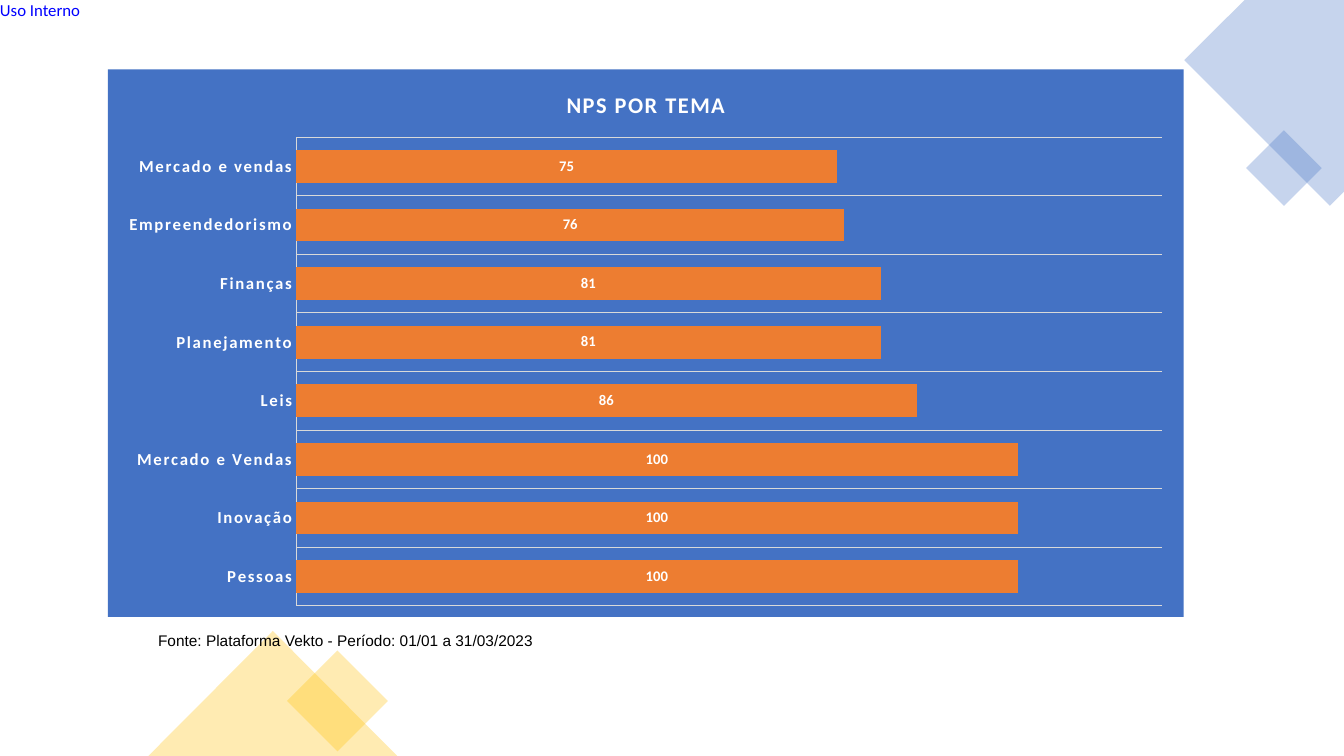
from lxml import etree
from pptx import Presentation
from pptx import util as u
from pptx.chart.data import CategoryChartData
from pptx.dml.color import RGBColor
from pptx.enum import chart as ch, shapes, text
from pptx.oxml import parse_xml
from pptx.oxml.ns import nsdecls, qn

Pt = u.Pt
BLUE = RGBColor(0x44, 0x72, 0xC4)
GOLD = RGBColor(0xFF, 0xC0, 0x00)
ORANGE = RGBColor(0xED, 0x7D, 0x31)
GRAY = RGBColor(0xD9, 0xD9, 0xD9)
WHITE = RGBColor(0xFF, 0xFF, 0xFF)
BLACK = RGBColor(0, 0, 0)
LINK_BLUE = RGBColor(0, 0, 0xFF)

WIDTH, HEIGHT = 960, 540
LETTER_SPACING = 120  # hundredths of a point
NPS = [
    ("Pessoas", 100), ("Inovação", 100), ("Mercado e Vendas", 100), ("Leis", 86),
    ("Planejamento", 81), ("Finanças", 81), ("Empreendedorismo", 76), ("Mercado e vendas", 75),
]


def paint(sp, color):
    """Flat fill at 30 % opacity, without outline or shadow."""
    sp.shadow.inherit = False
    sp.line.fill.background()
    sp.fill.solid()
    sp.fill.fore_color.rgb = color
    clr = sp.fill._xPr.find(qn("a:solidFill"))[0]
    etree.SubElement(clr, qn("a:alpha")).set("val", "30000")


def add_shape(slide, kind, box, color, rotation=0):
    sp = slide.shapes.add_shape(kind, *map(Pt, box))
    sp.rotation = rotation
    paint(sp, color)


def add_label(slide, box, words, size, font, color, margins):
    sp = slide.shapes.add_textbox(*map(Pt, box))
    tf = sp.text_frame
    tf.word_wrap = True
    tf.auto_size = text.MSO_AUTO_SIZE.NONE
    tf.margin_left = tf.margin_right = Pt(margins[0])
    tf.margin_top = tf.margin_bottom = Pt(margins[1])
    tf.text = words
    style_font(tf.paragraphs[0].runs[0].font, size, color, font)


def style_font(font, size, color, name="Calibri", bold=False, spacing=0):
    font.size, font.name, font.bold = Pt(size), name, bold
    font.color.rgb = color
    if spacing:
        font._element.set("spc", str(spacing))


def corner_decoration(slide, box):
    """Blue diamonds cut off by the top right corner."""
    x, y, w, h = box
    right = x + w
    outline = [(right, y), (x + 43, y), (x, y + 43), (right - 9.6, y + h), (right, y + h - 9.6)]
    builder = slide.shapes.build_freeform(*outline[0], scale=float(Pt(1)))
    builder.add_line_segments(outline[1:], close=True)
    paint(builder.convert_to_shape(), BLUE)
    add_shape(slide, shapes.MSO_SHAPE.RECTANGLE, (x + 52, y + 101, 38.2, 38.2), BLUE, 45)


def bottom_decoration(slide, box):
    """Gold diamond and triangle standing on the bottom edge."""
    x, y, w, h = box
    add_shape(slide, shapes.MSO_SHAPE.RECTANGLE, (x + 109.5, y + 24.5, 51, 51), GOLD, 45)
    add_shape(slide, shapes.MSO_SHAPE.ISOSCELES_TRIANGLE, box, GOLD)


def set_plot_layout(chart, x, y, w, h):
    """Fix the inner plot area, as fractions of the chart."""
    plot_area = chart._chartSpace.chart.plotArea
    for old in plot_area.findall(qn("c:layout")):
        plot_area.remove(old)
    plot_area.insert(0, parse_xml(
        f'<c:layout {nsdecls("c")}><c:manualLayout><c:layoutTarget val="inner"/>'
        '<c:xMode val="edge"/><c:yMode val="edge"/>'
        f'<c:x val="{x}"/><c:y val="{y}"/><c:w val="{w}"/><c:h val="{h}"/>'
        '</c:manualLayout></c:layout>'))


def nps_chart(slide, box):
    data = CategoryChartData()
    data.categories = [theme for theme, _ in NPS]
    data.add_series("Series 1", [score for _, score in NPS])
    chart = slide.shapes.add_chart(ch.XL_CHART_TYPE.BAR_STACKED, *map(Pt, box), data).chart
    style_font(chart.font, 10, BLACK)
    chart.has_legend = False

    # Blue background behind the whole chart
    chart._chartSpace.chart.addnext(parse_xml(
        f'<c:spPr {nsdecls("c", "a")}><a:solidFill><a:srgbClr val="{BLUE}"/></a:solidFill>'
        '<a:ln><a:noFill/></a:ln></c:spPr>'))

    # Title
    chart.has_title = True
    tf = chart.chart_title.text_frame
    tf.text = "NPS POR TEMA"
    style_font(tf.paragraphs[0].runs[0].font, 16, WHITE, bold=True, spacing=LETTER_SPACING)
    chart.chart_title.include_in_layout = False
    set_plot_layout(chart, 0.175, 0.124, 0.805, 0.856)

    # Axes
    themes, scores = chart.category_axis, chart.value_axis
    themes.major_tick_mark = ch.XL_TICK_MARK.NONE
    themes.has_major_gridlines = True
    style_font(themes.tick_labels.font, 12, WHITE, bold=True, spacing=LETTER_SPACING)
    for line in (themes.format.line, themes.major_gridlines.format.line):
        line.color.rgb = GRAY
        line.width = Pt(0.75)
    scores.minimum_scale, scores.maximum_scale = 0, 120
    scores.has_major_gridlines = False
    scores.visible = False

    # Bars and their values
    plot = chart.plots[0]
    plot.gap_width, plot.overlap = 79, 100
    plot.vary_by_categories = False
    bars = plot.series[0]
    bars.format.fill.solid()
    bars.format.fill.fore_color.rgb = ORANGE
    labels = bars.data_labels
    labels.show_value = True
    labels.position = ch.XL_LABEL_POSITION.CENTER
    style_font(labels.font, 10.5, WHITE, bold=True)


def nps_slide(prs):
    slide = prs.slides.add_slide(prs.slide_layouts[6])
    add_label(slide, (0, 0, 60.5, 14.4), "Uso Interno", 12, "Calibri", LINK_BLUE, (0, 0))
    corner_decoration(slide, (846, 0, WIDTH - 846, 147))
    bottom_decoration(slide, (106, HEIGHT - 89.3, 177.8, 89.3))
    add_label(slide, (105.8, 447.1, 324.7, 20.9),
              "Fonte: Plataforma Vekto - Período: 01/01 a 31/03/2023", 11, "Arial", BLACK, (7.2, 3.6))
    nps_chart(slide, (77, 49.6, 768.5, 391))


def main():
    prs = Presentation()
    prs.slide_width, prs.slide_height = Pt(WIDTH), Pt(HEIGHT)
    nps_slide(prs)
    prs.save("out.pptx")


if __name__ == "__main__":
    main()
